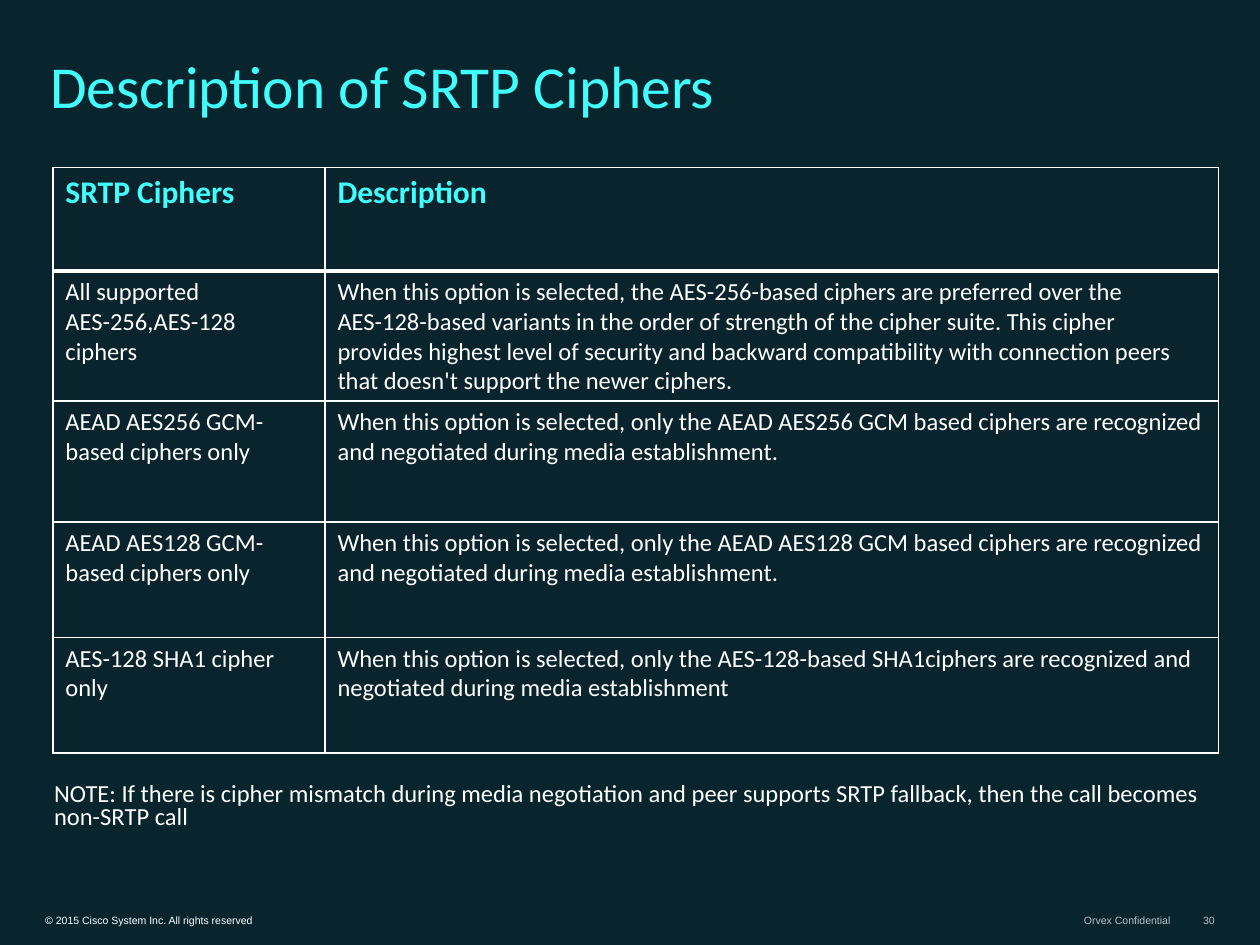
import pptx
import pptx.util
import pptx.dml.color
import pptx.enum.text
import pptx.oxml

Pt = pptx.util.Pt
RGB = pptx.dml.color.RGBColor
ANCHOR = pptx.enum.text.MSO_ANCHOR
ALIGN = pptx.enum.text.PP_ALIGN

BACKGROUND = RGB(0x08, 0x25, 0x2E)
CELL = RGB(0x09, 0x24, 0x2D)
CYAN = RGB(0x40, 0xFF, 0xFE)
WHITE = RGB(0xFF, 0xFF, 0xFF)
GREY = RGB(0xC0, 0xC0, 0xC0)

TITLE = "Description of SRTP Ciphers"
CIPHERS = [
    ("SRTP Ciphers", "Description"),
    ("All supported AES-256,AES-128 ciphers",
     "When this option is selected, the AES-256-based ciphers are preferred over the "
     "AES-128-based variants in the order of strength of the cipher suite. This cipher "
     "provides highest level of security and backward compatibility with connection peers "
     "that doesn't support the newer ciphers."),
    ("AEAD AES256 GCM-based ciphers only",
     "When this option is selected, only the AEAD AES256 GCM based ciphers are recognized "
     "and negotiated during media establishment."),
    ("AEAD AES128 GCM-based ciphers only",
     "When this option is selected, only the AEAD AES128 GCM based ciphers are recognized "
     "and negotiated during media establishment."),
    ("AES-128 SHA1 cipher only",
     "When this option is selected, only the AES-128-based SHA1ciphers are recognized and "
     "negotiated during media establishment"),
]
NOTE = ("NOTE: If there is cipher mismatch during media negotiation and peer supports SRTP "
        "fallback, then the call becomes non-SRTP call")
COLUMN_WIDTHS = (155.5, 510.5)
ROW_HEIGHTS = (59, 69, 69, 66, 66)

# text, (left, top, width, height), font, paragraph format, frame format
HEADING_FONT = dict(size=Pt(34), name="Calibri")
NOTE_FONT = dict(size=Pt(14), name="Calibri")
FOOTER_FONT = dict(size=Pt(6), name="Arial")
TIGHT = dict(line_spacing=0.8)
RIGHT = dict(alignment=ALIGN.RIGHT)
BODY_FRAME = dict(word_wrap=True, margin_top=Pt(3.6), margin_bottom=Pt(3.6))
FOOTER_FRAME = dict(vertical_anchor=ANCHOR.BOTTOM, margin_top=Pt(2.9), margin_bottom=Pt(2.9),
                    margin_left=Pt(6.5), margin_right=Pt(6.5))
TEXTS = [
    (TITLE, (21.6, 5.76, 696, 66.2), HEADING_FONT, CYAN, TIGHT,
     BODY_FRAME | dict(vertical_anchor=ANCHOR.BOTTOM)),
    (NOTE, (23.8, 444.2, 696, 48.2), NOTE_FONT, WHITE, TIGHT,
     BODY_FRAME | dict(vertical_anchor=ANCHOR.TOP)),
    ("© 2015 Cisco System Inc. All rights reserved", (19.4, 518.4, 269.3, 13.7),
     FOOTER_FONT, WHITE, {}, FOOTER_FRAME | dict(word_wrap=True)),
    ("Orvex Confidential", (611.3, 518.4, 64, 13.7),
     FOOTER_FONT, GREY, RIGHT, FOOTER_FRAME | dict(word_wrap=False)),
    ("30", (680.4, 518.4, 20.2, 13.7),
     FOOTER_FONT, GREY, RIGHT, FOOTER_FRAME | dict(word_wrap=False)),
]


def apply(target, values):
    for name, value in values.items():
        setattr(target, name, value)


def write(frame, text, font, color, paragraph_format):
    paragraph = frame.paragraphs[0]
    apply(paragraph, paragraph_format)
    run = paragraph.add_run()
    run.text = text
    apply(run.font, font)
    run.font.color.rgb = color


def add_text(slide, text, box, font, color, paragraph_format, frame_format):
    frame = slide.shapes.add_textbox(*map(Pt, box)).text_frame
    apply(frame, frame_format)
    write(frame, text, font, color, paragraph_format)


def set_borders(cell, widths):
    """Draw white left, right, top and bottom lines of the given widths in points."""
    properties = cell._tc.get_or_add_tcPr()
    for position, (side, width) in enumerate(zip("LRTB", widths)):
        properties.insert(position, pptx.oxml.parse_xml(
            f'<a:ln{side} xmlns:a="http://schemas.openxmlformats.org/drawingml/2006/main" '
            f'w="{Pt(width)}"><a:solidFill><a:srgbClr val="{WHITE}"/></a:solidFill></a:ln{side}>'))


def add_cipher_table(slide):
    table = slide.shapes.add_table(
        len(CIPHERS), len(COLUMN_WIDTHS), Pt(30.2), Pt(95.8),
        Pt(sum(COLUMN_WIDTHS)), Pt(sum(ROW_HEIGHTS))).table
    table.horz_banding = False
    for column, width in zip(table.columns, COLUMN_WIDTHS):
        column.width = Pt(width)
    for r, (height, entries) in enumerate(zip(ROW_HEIGHTS, CIPHERS)):
        table.rows[r].height = Pt(height)
        header = r == 0
        font = dict(size=Pt(18 if header else 14), name="Calibri", bold=header)
        for c, entry in enumerate(entries):
            cell = table.cell(r, c)
            cell.fill.solid()
            cell.fill.fore_color.rgb = CELL
            set_borders(cell, (1, 1, 3 if r == 1 else 1, 3 if header else 1))
            write(cell.text_frame, entry, font, CYAN if header else WHITE, {})


def main():
    deck = pptx.Presentation()
    deck.slide_width, deck.slide_height = Pt(720), Pt(540)
    slide = deck.slides.add_slide(deck.slide_layouts[6])
    slide.background.fill.solid()
    slide.background.fill.fore_color.rgb = BACKGROUND
    for item in TEXTS:
        add_text(slide, *item)
    add_cipher_table(slide)
    deck.save("out.pptx")


if __name__ == "__main__":
    main()
